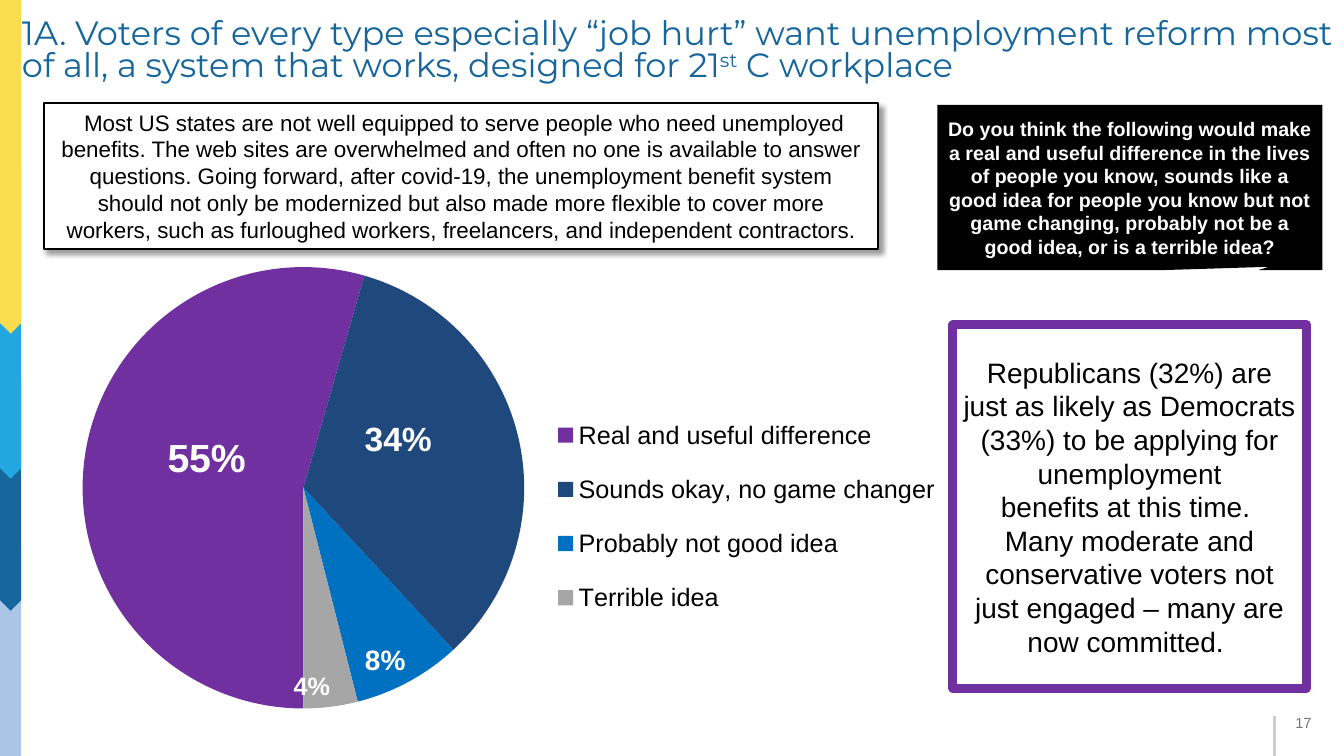
import pptx
import pptx.chart.data
import pptx.dml.color
import pptx.enum.chart
import pptx.enum.shapes
import pptx.enum.text
import pptx.oxml
import pptx.oxml.ns
import pptx.util

SHAPE = pptx.enum.shapes.MSO_SHAPE
LABEL = pptx.enum.chart.XL_LABEL_POSITION
ALIGN = pptx.enum.text.PP_ALIGN
ANCHOR = pptx.enum.text.MSO_ANCHOR
DRAWING = pptx.oxml.ns.nsdecls("a")
CHART = pptx.oxml.ns.nsdecls("c")
SHADOW = (
    f'<a:effectLst {DRAWING}><a:outerShdw blurRad="50800" dist="38100" dir="2700000" algn="tl" '
    'rotWithShape="0"><a:srgbClr val="000000"><a:alpha val="40000"/></a:srgbClr>'
    "</a:outerShdw></a:effectLst>"
)


def color(value):
    return pptx.dml.color.RGBColor.from_string(value)


def set_values(target, values):
    for attribute, value in values.items():
        setattr(target, attribute, value)


def apply_font(font, size, ink, name="Arial", bold=False):
    set_values(font, {"size": pptx.util.Pt(size), "name": name, "bold": bold})
    font.color.rgb = color(ink)


def set_layout(parent, index, shares, mode="", target=""):
    """Give a chart part a manual layout in shares of the chart's size."""
    for old in parent.findall(pptx.oxml.ns.qn("c:layout")):
        parent.remove(old)
    sizes = "".join(f'<c:{tag} val="{share}"/>' for tag, share in zip("xywh", shares))
    parent.insert(index, pptx.oxml.parse_xml(
        f"<c:layout {CHART}><c:manualLayout>{target}{mode}{sizes}</c:manualLayout></c:layout>"))


class SlideBuilder:
    """Places elements on a grid of 100 columns by 100 rows."""

    def __init__(self, presentation):
        self.column = presentation.slide_width / 100
        self.row = presentation.slide_height / 100
        self.slide = presentation.slides.add_slide(presentation.slide_layouts[6])

    def place(self, left, top, width, height):
        return [int(left * self.column), int(top * self.row),
                int(width * self.column), int(height * self.row)]

    def fill_text(self, shape, paragraphs, align, anchor, spacing=None, **font):
        frame = shape.text_frame
        set_values(frame, {"word_wrap": True, "vertical_anchor": anchor})
        for index, runs in enumerate(paragraphs):
            paragraph = frame.add_paragraph() if index else frame.paragraphs[0]
            set_values(paragraph, {"alignment": align, "line_spacing": spacing})
            for text, baseline in runs:
                run = paragraph.add_run()
                run.text = text
                apply_font(run.font, **font)
                if baseline:
                    run._r.get_or_add_rPr().set("baseline", str(baseline * 1000))

    def text(self, box, runs, anchor=ANCHOR.TOP, **style):
        shape = self.slide.shapes.add_textbox(*self.place(*box))
        self.fill_text(shape, [runs], ALIGN.LEFT, anchor, **style)
        return shape

    def shape(self, kind, box, fill, line=None, line_width=0):
        shape = self.slide.shapes.add_shape(kind, *self.place(*box))
        shape.shadow.inherit = False
        shape.fill.solid()
        shape.fill.fore_color.rgb = color(fill)
        if line:
            shape.line.color.rgb = color(line)
            shape.line.width = pptx.util.Pt(line_width)
        else:
            shape.line.fill.background()
        return shape

    def panel(self, kind, box, paragraphs, fill, line=None, line_width=0, **font):
        shape = self.shape(kind, box, fill, line, line_width)
        runs = [[(text, 0)] for text in paragraphs]
        self.fill_text(shape, runs, ALIGN.CENTER, ANCHOR.MIDDLE, **font)
        return shape

    def down_arrow(self, top, height, width, fill):
        """Pentagon turned a quarter so that it points down."""
        shape = self.shape(SHAPE.PENTAGON, (0, top, width, height), fill)
        across, along = shape.width, shape.height
        set_values(shape, {
            "left": (across - along) // 2, "top": shape.top + (along - across) // 2,
            "width": along, "height": across, "rotation": 90,
        })

    def vertical_line(self, left, top, bottom, ink, width):
        x, start, _, end = self.place(left, top, 0, bottom)
        line = self.slide.shapes.add_connector(
            pptx.enum.shapes.MSO_CONNECTOR.STRAIGHT, x, start, x, end)
        line.line.color.rgb = color(ink)
        line.line.width = pptx.util.Pt(width)
        line._element.spPr.append(pptx.oxml.parse_xml(f"<a:effectLst {DRAWING}/>"))

    def pie(self, box, slices, plot_shares, legend_shares):
        data = pptx.chart.data.CategoryChartData(number_format="0%")
        data.categories = [part["name"] for part in slices]
        data.add_series("Series 1", [part["value"] for part in slices])
        chart = self.slide.shapes.add_chart(
            pptx.enum.chart.XL_CHART_TYPE.PIE, *self.place(*box), data).chart
        apply_font(chart.font, 10, "000000")
        set_values(chart, {"has_title": False, "has_legend": True})
        set_values(chart.legend, {
            "position": pptx.enum.chart.XL_LEGEND_POSITION.RIGHT, "include_in_layout": False})
        apply_font(chart.legend.font, 18, "000000")
        edge = '<c:xMode val="edge"/><c:yMode val="edge"/>'
        set_layout(chart.legend._element, 1, legend_shares, edge)

        plot = chart.plots[0]
        plot.vary_by_categories = True
        pie = plot._element
        for old in pie.findall(pptx.oxml.ns.qn("c:firstSliceAng")):
            pie.remove(old)
        pie.append(pptx.oxml.parse_xml(f'<c:firstSliceAng {CHART} val="180"/>'))
        set_layout(pie.getparent(), 0, plot_shares, edge, '<c:layoutTarget val="inner"/>')

        # Slice colours and labels
        for index, part in enumerate(slices):
            point = plot.series[0].points[index]
            point.format.fill.solid()
            point.format.fill.fore_color.rgb = color(part["fill"])
            label = point.data_label
            apply_font(label.font, part["size"], "FFFFFF", bold=True)
            label.position = part["position"]
            if "shift" in part:
                set_layout(label._dLbl, 1, part["shift"])


def main():
    presentation = pptx.Presentation()
    presentation.slide_width = pptx.util.Inches(13.33)
    presentation.slide_height = pptx.util.Inches(7.5)
    builder = SlideBuilder(presentation)

    # Page number
    builder.vertical_line(94.8, 94.67, 100, "CDCDCD", 2)
    number = builder.text((95.85, 93.87, 3.08, 3.33), [("17", 0)], size=10.5, ink="767676")
    margins = {"margin_left": 0.07, "margin_right": 0.07, "margin_top": 0.04, "margin_bottom": 0.04}
    set_values(number.text_frame, {key: pptx.util.Inches(size) for key, size in margins.items()})

    # Ribbon down the left edge, lowest band first
    ribbon = 1.58
    builder.shape(SHAPE.RECTANGLE, (0, 72.4, ribbon, 27.6), "ABC5E7")
    for top, height, fill in ((50, 30.8, "16669B"), (21.87, 41.47, "22A7E0"), (0, 44.13, "FADD4E")):
        builder.down_arrow(top, height, ribbon, fill)

    # Title
    builder.text((0.9, -0.4, 99.15, 14.53), [
        ("1A. Voters of every type especially “job hurt” want unemployment reform most of all, "
         "a system that works, designed for 21", 0),
        ("st", 30),
        (" C workplace", 0),
    ], anchor=ANCHOR.MIDDLE, spacing=0.8, size=24, ink="16669B", name="Montserrat")

    # Proposal statement
    statement = builder.panel(SHAPE.RECTANGLE, (3.3, 13.6, 62.03, 19.33), [
        " Most US states are not well equipped to serve people who need unemployed benefits. "
        "The web sites are overwhelmed and often no one is available to answer questions. "
        "Going forward, after covid-19, the unemployment benefit system should not only be "
        "modernized but also made more flexible to cover more workers, such as furloughed "
        "workers, freelancers, and independent contractors.",
    ], "FFFFFF", "000000", 1.5, size=16, ink="000000")
    properties = statement._element.spPr
    properties.replace(properties.find(pptx.oxml.ns.qn("a:effectLst")), pptx.oxml.parse_xml(SHADOW))

    # Answers
    slices = [
        {"name": "Real and useful difference", "value": 0.55, "fill": "7030A0", "size": 28,
         "position": LABEL.CENTER, "shift": (0.01, -0.03)},
        {"name": "Sounds okay, no game changer", "value": 0.34, "fill": "1F497D", "size": 24,
         "position": LABEL.CENTER, "shift": (-0.01, -0.05)},
        {"name": "Probably not good idea", "value": 0.08, "fill": "0070C0", "size": 20,
         "position": LABEL.INSIDE_END},
        {"name": "Terrible idea", "value": 0.04, "fill": "A6A6A6", "size": 18,
         "position": LABEL.INSIDE_END},
    ]
    builder.pie((-4.35, 35.33, 92.85, 58.4), slices, (0.02, 0, 0.54, 1), (0.49, 0.29, 0.31, 0.55))

    # Finding
    builder.panel(SHAPE.RECTANGLE, (70.88, 42.93, 26.33, 48.13), [
        "Republicans (32%) are just as likely as Democrats (33%) to be applying for unemployment",
        "benefits at this time. ",
        "Many moderate and conservative voters not just engaged – many are now committed. ",
    ], "FFFFFF", "7030A0", 6, size=20, ink="000000")

    # Survey question
    question = builder.panel(SHAPE.RECTANGULAR_CALLOUT, (69.75, 13.87, 28.65, 21.87), [
        "Do you think the following would make a real and useful difference in the lives of "
        "people you know, sounds like a good idea for people you know but not game changing, "
        "probably not be a good idea, or is a terrible idea?",
    ], "000000", size=14, ink="FFFFFF", bold=True)
    question.adjustments[0], question.adjustments[1] = 0.36, 0.48

    presentation.save("out.pptx")


if __name__ == "__main__":
    main()
